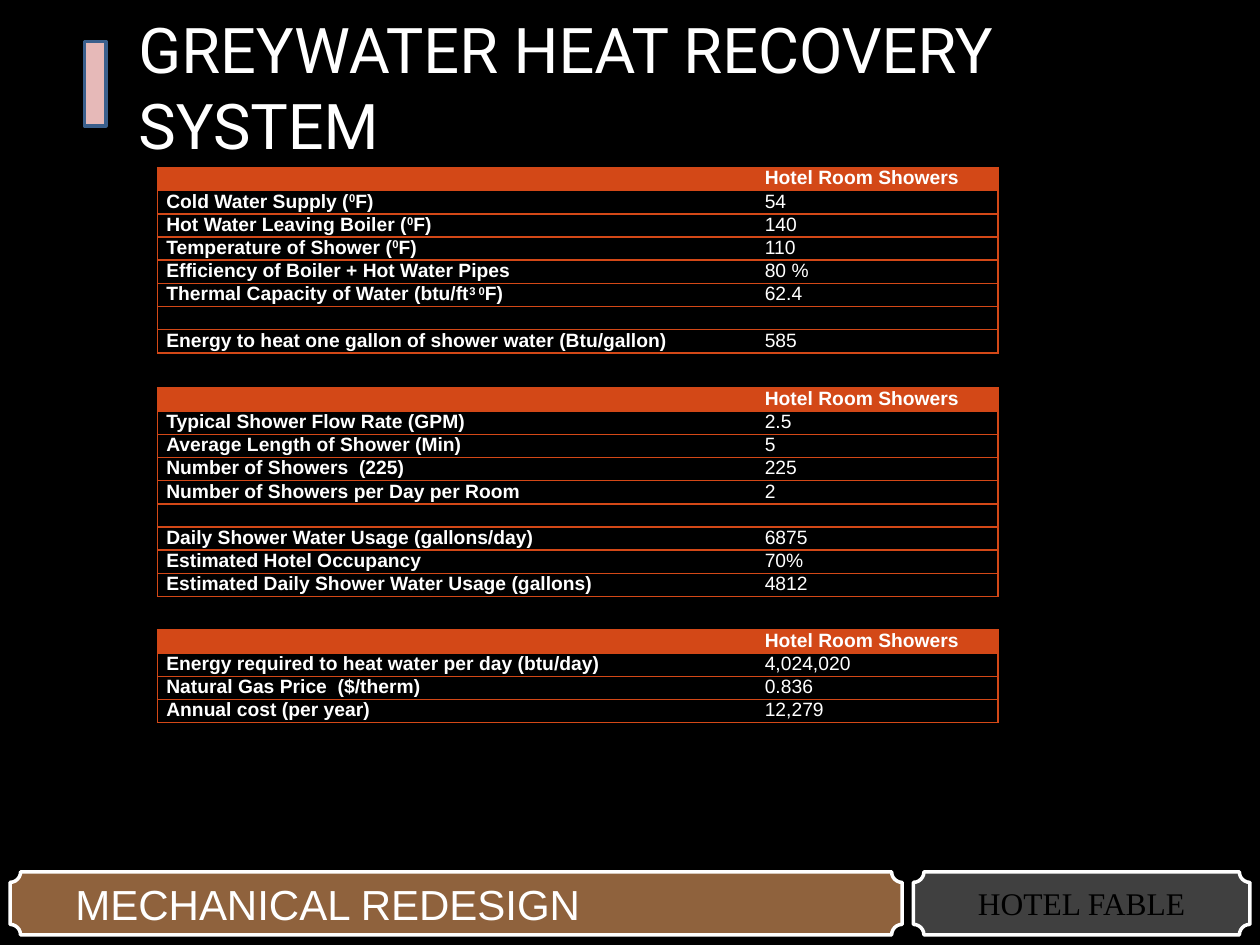
from lxml.etree import SubElement
from pptx import Presentation
from pptx.dml.color import RGBColor
from pptx.enum.shapes import MSO_SHAPE as Shape
from pptx.enum.text import MSO_ANCHOR as Anchor, PP_ALIGN as Align
from pptx.oxml import parse_xml
from pptx.oxml.ns import nsdecls, qn
from pptx.util import Inches, Pt

ORANGE, WHITE, BLACK = "D34817", "FFFFFF", "000000"
TABLE_LEFT, TABLE_WIDTH, LABEL_WIDTH = 1.25, 6.67, 4.75
CELL_FONT_SIZE = 11
HEADER = ("", "Hotel Room Showers")

# Text between carets is superscript.
WATER_HEATING = [
    ("Cold Water Supply (^0^F)", "54"),
    ("Hot Water Leaving Boiler (^0^F)", "140"),
    ("Temperature of Shower (^0^F)", "110"),
    ("Efficiency of Boiler + Hot Water Pipes", "80 %"),
    ("Thermal Capacity of Water (btu/ft^3 0^F)", "62.4"),
    ("", ""),
    ("Energy to heat one gallon of shower water (Btu/gallon)", "585"),
]
SHOWER_USAGE = [
    ("Typical Shower Flow Rate (GPM)", "2.5"),
    ("Average Length of Shower (Min)", "5"),
    ("Number of Showers  (225)", "225"),
    ("Number of Showers per Day per Room", "2"),
    ("", ""),
    ("Daily Shower Water Usage (gallons/day)", "6875"),
    ("Estimated Hotel Occupancy", "70%"),
    ("Estimated Daily Shower Water Usage (gallons)", "4812"),
]
ENERGY_COST = [
    ("Energy required to heat water per day (btu/day)", "4,024,020"),
    ("Natural Gas Price  ($/therm)", "0.836"),
    ("Annual cost (per year)", "12,279"),
]


def rgb(color):
    return RGBColor.from_string(color)


def style(paragraph, size, font_name, color, bold=False):
    font = paragraph.font
    font.size, font.name, font.bold = Pt(size), font_name, bold
    font.color.rgb = rgb(color)


def add_panel(slide, preset, box, fill, line):
    panel = slide.shapes.add_shape(preset, *map(Inches, box))
    panel.shadow.inherit = False
    panel.fill.solid()
    panel.fill.fore_color.rgb = rgb(fill)
    panel.line.color.rgb = rgb(line)
    panel.line.width = Pt(2)
    return panel


def add_label(slide, box, text, size, font_name, anchor):
    frame = slide.shapes.add_textbox(*map(Inches, box)).text_frame
    frame.word_wrap = True
    frame.vertical_anchor = anchor
    frame.text = text
    style(frame.paragraphs[0], size, font_name, WHITE)


def set_borders(cell, open_side):
    """Rule the cell in orange on every side but open_side."""
    properties = cell._tc.get_or_add_tcPr()
    for position, side in enumerate(("lnL", "lnR", "lnT", "lnB")):
        paint = ("<a:noFill/>" if side == open_side else
                 f'<a:solidFill><a:srgbClr val="{ORANGE}"/></a:solidFill>')
        properties.insert(position, parse_xml(
            f'<a:{side} {nsdecls("a")} w="{Pt(1)}">{paint}</a:{side}>'))


def write_cell(cell, text, bold):
    cell.margin_left = cell.margin_right = Inches(0.07)
    cell.margin_top = cell.margin_bottom = 0
    paragraph = cell.text_frame.paragraphs[0]
    style(paragraph, CELL_FONT_SIZE, "Arial", WHITE, bold)
    if not text:
        # An empty line takes its height from the end-of-paragraph size.
        SubElement(paragraph._p, qn("a:endParaRPr"), sz=str(CELL_FONT_SIZE * 100))
        return
    for index, part in enumerate(text.split("^")):
        run = paragraph.add_run()
        run.text = part
        if index % 2:
            run.font._element.set("baseline", "30000")


def add_data_table(slide, top, height, body):
    rows = [HEADER, *body]
    table = slide.shapes.add_table(
        len(rows), 2, Inches(TABLE_LEFT), Inches(top),
        Inches(TABLE_WIDTH), Inches(height)).table
    table.horz_banding = False
    table.columns[0].width = Inches(LABEL_WIDTH)
    table.columns[1].width = Inches(TABLE_WIDTH - LABEL_WIDTH)
    for r, row in enumerate(rows):
        for c, text in enumerate(row):
            cell = table.cell(r, c)
            write_cell(cell, text, bold=r == 0 or c == 0)
            if r == 0:
                cell.fill.solid()
                cell.fill.fore_color.rgb = rgb(ORANGE)
            else:
                cell.fill.background()
            set_borders(cell, open_side="lnL" if c else "lnR")


def main():
    deck = Presentation()
    deck.slide_width, deck.slide_height = Inches(10), Inches(7.5)
    slide = deck.slides.add_slide(deck.slide_layouts[6])
    slide.background.fill.solid()
    slide.background.fill.fore_color.rgb = rgb(BLACK)

    add_panel(slide, Shape.PLAQUE, (0.08, 6.92, 7.08, 0.5), "8F623D", WHITE)
    add_label(slide, (1, 0.42, 7.42, 0.53), "GREYWATER HEAT RECOVERY SYSTEM",
              36, "Roboto", Anchor.MIDDLE)
    add_panel(slide, Shape.RECTANGLE, (0.67, 0.33, 0.17, 0.67), "E6B9B8", "3A5F8C")
    add_label(slide, (0.5, 6.92, 6.83, 0.5), "MECHANICAL REDESIGN",
              24, "Arial", Anchor.TOP)

    hotel = add_panel(slide, Shape.PLAQUE, (7.25, 6.92, 2.67, 0.5), "404040", WHITE)
    hotel.text_frame.text = "HOTEL FABLE"
    hotel.text_frame.vertical_anchor = Anchor.MIDDLE
    hotel_name = hotel.text_frame.paragraphs[0]
    hotel_name.alignment = Align.CENTER
    style(hotel_name, 18, "Times New Roman", BLACK)

    add_data_table(slide, 1.33, 1.47, WATER_HEATING)
    add_data_table(slide, 3.08, 1.65, SHOWER_USAGE)
    add_data_table(slide, 5, 0.73, ENERGY_COST)
    deck.save("out.pptx")


if __name__ == "__main__":
    main()
